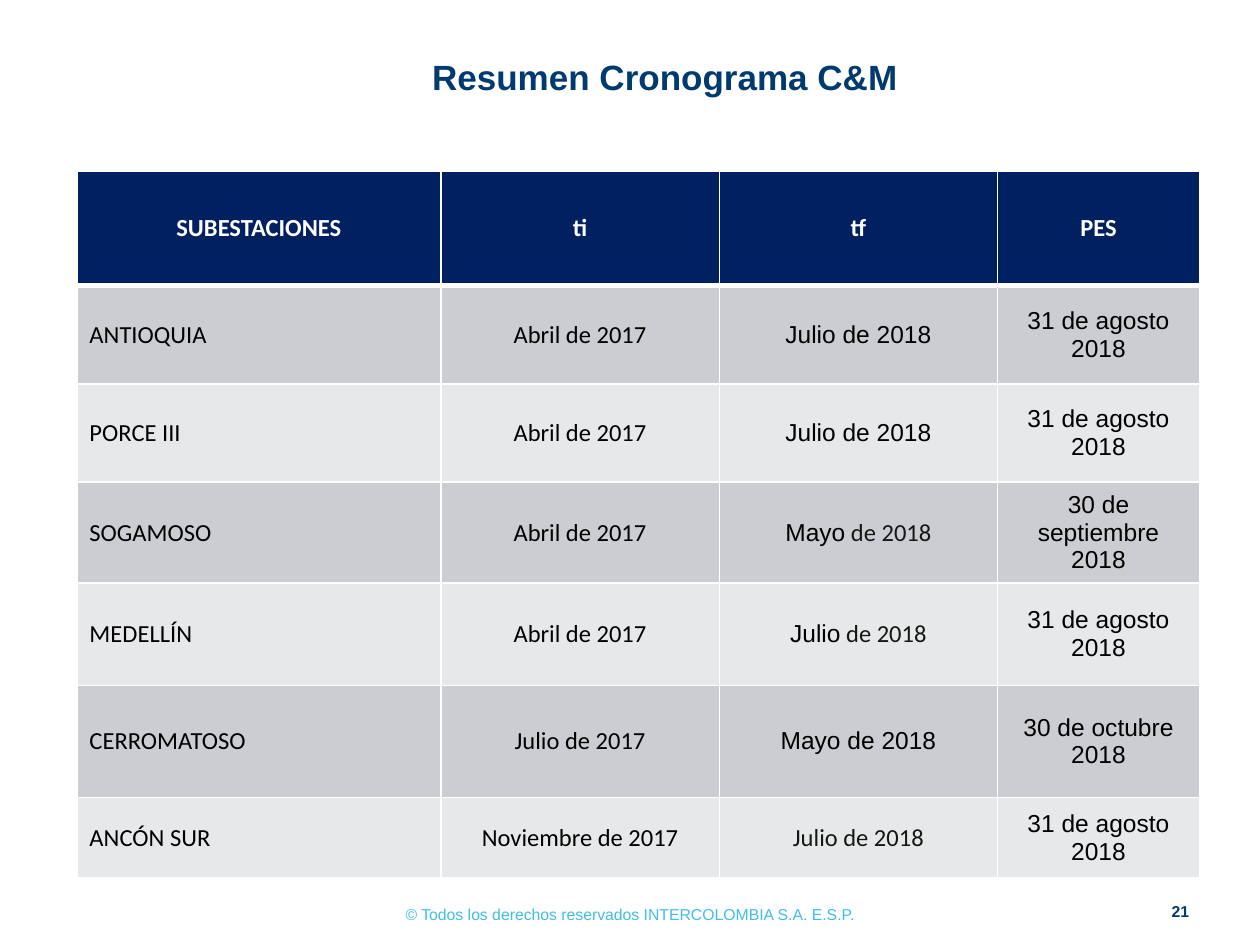
from dataclasses import dataclass

from lxml import etree
from pptx import Presentation
from pptx import util as u
from pptx.dml.color import RGBColor
from pptx.enum import text
from pptx.oxml import ns

COLOURS = {
    "white": "FFFFFF", "black": "000000", "ink": "161614", "title": "003A6F",
    "footer": "40BDE8", "header": "002060", "odd": "CCCDD2", "even": "E7E8EA",
}
CENTRE = text.PP_ALIGN.CENTER
LEFT = text.PP_ALIGN.LEFT
MIDDLE = text.MSO_ANCHOR.MIDDLE
COLUMN_WIDTHS = [7.34, 5.61, 5.61, 4.07]
ROW_HEIGHTS = [2.31, 1.98, 1.98, 1.83, 2.06, 2.26, 1.63]


@dataclass
class Run:
    words: str
    font: str = "Arial"
    colour: str = "black"
    size: int = 14
    bold: bool = False


@dataclass
class Label:
    run: Run
    left: float
    top: float
    width: float
    height: float
    frame_format: dict


@dataclass
class Substation:
    name: str
    start: str
    finish: list[Run]
    service: str


def calibri(words: str, colour: str = "black") -> Run:
    return Run(words, "Calibri", colour)


LABELS = [
    Label(Run("© Todos los derechos reservados INTERCOLOMBIA S.A. E.S.P.", colour="footer", size=9),
          6.91, 18.11, 11.58, 0.64, {"vertical_anchor": text.MSO_ANCHOR.TOP}),
    Label(Run("Resumen Cronograma C&M", colour="title", size=20, bold=True),
          4.39, 0.86, 18.03, 1.37, {"vertical_anchor": MIDDLE}),
    Label(Run("21", colour="title", size=9, bold=True), 23.16, 18.03, 1.02, 0.66,
          {"vertical_anchor": text.MSO_ANCHOR.BOTTOM, "margin_right": 0}),
]
HEADINGS = ["SUBESTACIONES", "ti", "tf", "PES"]
SUBSTATIONS = [
    Substation("ANTIOQUIA", "Abril de 2017", [Run("Julio de 2018")], "31 de agosto 2018"),
    Substation("PORCE III", "Abril de 2017", [Run("Julio de 2018")], "31 de agosto 2018"),
    Substation("SOGAMOSO", "Abril de 2017", [Run("Mayo"), calibri(" de 2018", "ink")],
               "30 de septiembre 2018"),
    Substation("MEDELLÍN", "Abril de 2017", [Run("Julio"), calibri(" de 2018", "ink")],
               "31 de agosto 2018"),
    Substation("CERROMATOSO", "Julio de 2017", [Run("Mayo de 2018")], "30 de octubre 2018"),
    Substation("ANCÓN SUR", "Noviembre de 2017", [calibri("Julio de 2018", "ink")],
               "31 de agosto 2018"),
]


def write_runs(paragraph, runs: list[Run], alignment) -> None:
    paragraph.alignment = alignment
    for item in runs:
        run = paragraph.add_run()
        run.text = item.words
        font_format = {"name": item.font, "size": u.Pt(item.size), "bold": item.bold}
        for attribute, value in font_format.items():
            setattr(run.font, attribute, value)
        run.font.color.rgb = RGBColor.from_string(COLOURS[item.colour])


def add_label(slide, label: Label) -> None:
    box = slide.shapes.add_textbox(*map(u.Cm, (label.left, label.top, label.width, label.height)))
    for attribute, value in {"word_wrap": True, **label.frame_format}.items():
        setattr(box.text_frame, attribute, value)
    write_runs(box.text_frame.paragraphs[0], [label.run], CENTRE)


def set_borders(cell, widths: dict[str, float]) -> None:
    properties = cell._tc.get_or_add_tcPr()
    for position, (side, width) in enumerate(widths.items()):
        line = etree.Element(ns.qn(f"a:{side}"), w=str(u.Pt(width)))
        fill = etree.SubElement(line, ns.qn("a:solidFill"))
        etree.SubElement(fill, ns.qn("a:srgbClr"), val=COLOURS["white"])
        properties.insert(position, line)


def fill_cell(cell, runs: list[Run], alignment, fill: str, borders: dict[str, float]) -> None:
    cell.vertical_anchor = MIDDLE
    cell.fill.solid()
    cell.fill.fore_color.rgb = RGBColor.from_string(COLOURS[fill])
    write_runs(cell.text_frame.paragraphs[0], runs, alignment)
    set_borders(cell, borders)


def add_schedule(slide) -> None:
    rows = [[[Run(heading, "Calibri", "white", bold=True)] for heading in HEADINGS]]
    rows += [[[calibri(item.name)], [calibri(item.start)], item.finish, [Run(item.service)]]
             for item in SUBSTATIONS]
    table = slide.shapes.add_table(
        len(rows), len(HEADINGS), u.Cm(1.55), u.Cm(3.45),
        u.Cm(sum(COLUMN_WIDTHS)), u.Cm(sum(ROW_HEIGHTS))).table
    for column, width in zip(table.columns, COLUMN_WIDTHS):
        column.width = u.Cm(width)
    for row, height in zip(table.rows, ROW_HEIGHTS):
        row.height = u.Cm(height)
    for row_index, row in enumerate(rows):
        fill = "header" if row_index == 0 else ("even", "odd")[row_index % 2]
        borders = {"lnL": 1, "lnR": 1, "lnT": 3 if row_index == 1 else 1,
                   "lnB": 3 if row_index == 0 else 1}
        for column_index, runs in enumerate(row):
            alignment = LEFT if row_index and column_index == 0 else CENTRE
            fill_cell(table.cell(row_index, column_index), runs, alignment, fill, borders)


def main() -> None:
    presentation = Presentation()
    presentation.slide_width = u.Cm(25.4)
    presentation.slide_height = u.Cm(19.05)
    slide = presentation.slides.add_slide(presentation.slide_layouts[6])
    for label in LABELS:
        add_label(slide, label)
    add_schedule(slide)
    presentation.save("out.pptx")


if __name__ == "__main__":
    main()
